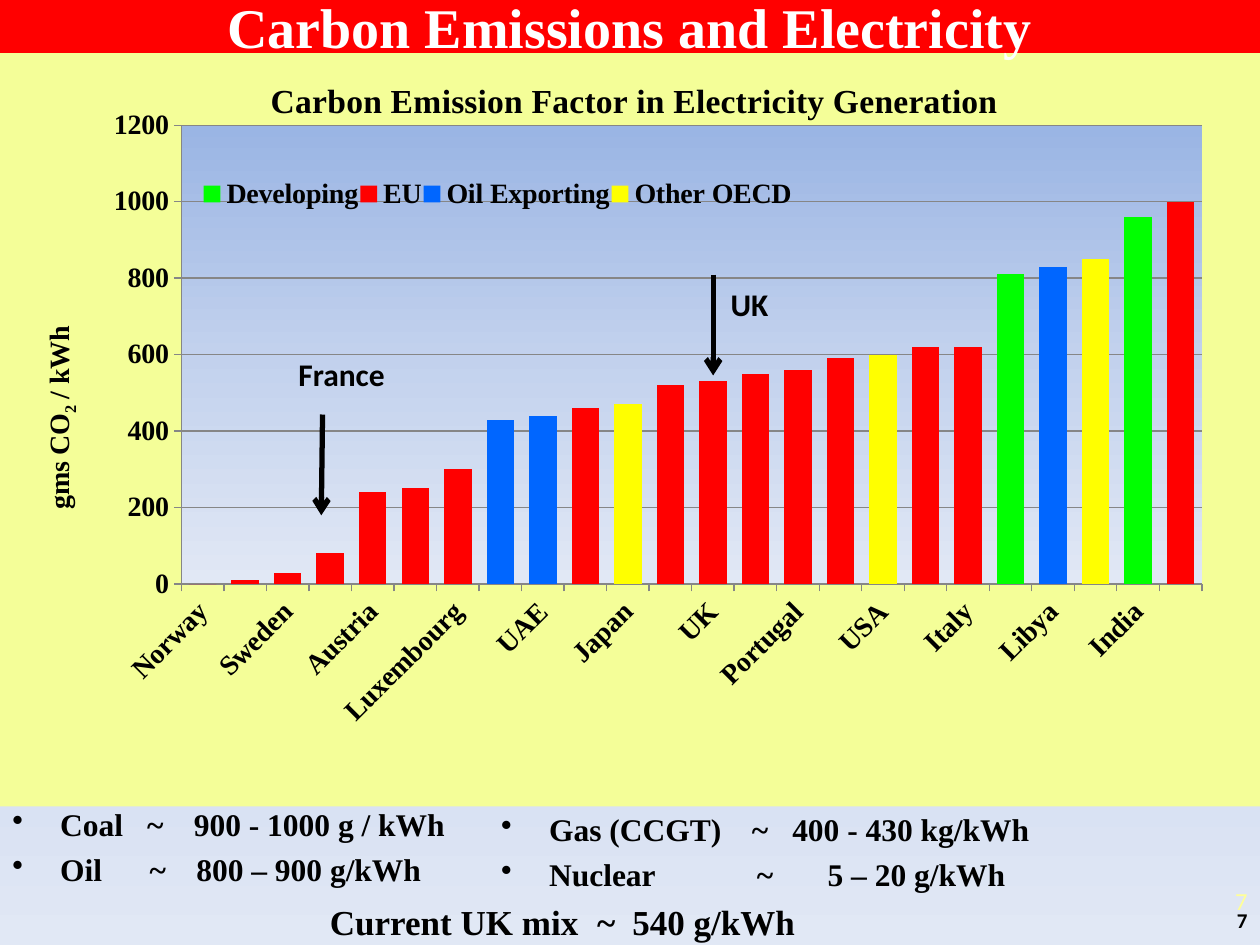
from lxml.etree import SubElement
from pptx import Presentation
from pptx.chart.data import CategoryChartData
from pptx.dml.color import RGBColor
from pptx.enum.chart import XL_CHART_TYPE as ChartType, XL_LEGEND_POSITION as LegendPosition
from pptx.enum.chart import XL_TICK_MARK as TickMark
from pptx.enum.shapes import MSO_CONNECTOR as Connector, MSO_SHAPE as Shape
from pptx.enum.text import MSO_ANCHOR as Anchor, PP_ALIGN as Align
from pptx.oxml import parse_xml
from pptx.oxml.ns import nsdecls, qn
from pptx.util import Inches, Pt

SERIF, SANS = "Times New Roman", "Calibri"
TITLE = "Carbon Emissions and Electricity"
CHART_TITLE = "Carbon Emission Factor in Electricity Generation"
AXIS_TITLE = [("gms CO", False), ("2", True), (" / kWh", False)]
GRADIENT = [(0, "9AB5E4"), (50, "C2D1ED"), (100, "E1E8F5")]
GROUPS = {"Developing": "00FF00", "EU": "FF0000", "Oil Exporting": "0066FF", "Other OECD": "FFFF00"}
DEV, EU, OIL, OECD = GROUPS
# Every other column is labelled
COUNTRIES = ["Norway", "Sweden", "Austria", "Luxembourg", "UAE", "Japan",
             "UK", "Portugal", "USA", "Italy", "Libya", "India"]
EMISSIONS = [
    (EU, 0), (EU, 10), (EU, 30), (EU, 80), (EU, 240), (EU, 250), (EU, 300), (OIL, 430),
    (OIL, 440), (EU, 460), (OECD, 470), (EU, 520), (EU, 530), (EU, 550), (EU, 560), (EU, 590),
    (OECD, 600), (EU, 620), (EU, 620), (DEV, 810), (OIL, 830), (OECD, 850), (DEV, 960), (EU, 1000),
]
# Label, label box, arrow start, arrow end
CALLOUTS = [
    ("UK", (5.7, 2.21, 0.72, 0.4), (5.66, 2.18), (5.66, 2.98)),
    ("France", (2.27, 2.77, 1.1, 0.4), (2.56, 3.29), (2.55, 4.09)),
]
# Box, then lines with their tab stops
FUELS = [
    ((0, 6.34, 3.96, 0.71), [("Coal\t~\t900 - 1000 g / kWh", (1.07, 1.44)),
                             ("Oil\t~\t800 – 900 g/kWh", (1.09, 1.46))]),
    ((3.88, 6.38, 5, 0.81), [("Gas (CCGT)\t~\t400 - 430 kg/kWh", (1.99, 2.31)),
                             ("Nuclear\t~\t5 – 20 g/kWh", (2.03, 2.59))]),
]
UK_MIX = ("Current UK mix\t~\t540 g/kWh", (2.12, 2.4))


def rgb(color):
    return RGBColor.from_string(color)


def inches(values):
    return [Inches(value) for value in values]


def gradient_fill():
    stops = "".join(f'<a:gs pos="{position * 1000}"><a:srgbClr val="{color}"/></a:gs>'
                    for position, color in GRADIENT)
    return parse_xml(f'<a:gradFill {nsdecls("a")}><a:gsLst>{stops}</a:gsLst>'
                     '<a:lin ang="5400000" scaled="0"/></a:gradFill>')


def style_font(font, size, name=SERIF, color="000000", bold=True):
    font.size, font.name, font.bold = Pt(size), name, bold
    font.color.rgb = rgb(color)


def write(frame, lines, size, name=SERIF, color="000000", bold=True, align=None,
          anchor=Anchor.TOP, bullet=False, before=0, wrap=True):
    """Each line is a pair of text and tab stops."""
    frame.word_wrap, frame.vertical_anchor = wrap, anchor
    for index, (text, stops) in enumerate(lines):
        paragraph = frame.paragraphs[0] if index == 0 else frame.add_paragraph()
        paragraph.alignment, paragraph.space_before = align, Pt(before)
        run = paragraph.add_run()
        run.text = text
        style_font(run.font, size, name, color, bold)
        properties = paragraph._p.get_or_add_pPr()
        if bullet:
            properties.set("marL", str(Inches(0.38)))
            properties.set("indent", str(-Inches(0.38)))
            SubElement(properties, qn("a:buChar"), char="•")
        if stops:
            tabs = SubElement(properties, qn("a:tabLst"))
            for stop in stops:
                SubElement(tabs, qn("a:tab"), pos=str(Inches(stop)), algn="l")


def add_text(shapes, box, lines, size, **options):
    write(shapes.add_textbox(*inches(box)).text_frame, lines, size, **options)


def add_arrow(shapes, start, end):
    arrow = shapes.add_connector(Connector.STRAIGHT, *inches(start + end))
    arrow.line.color.rgb, arrow.line.width = rgb("000000"), Pt(3)
    SubElement(arrow.line._get_or_add_ln(), qn("a:tailEnd"), type="arrow")
    SubElement(arrow._element.spPr, qn("a:effectLst"))


def set_layout(parent, inner=False, **fractions):
    """Place a chart part by fractions of the chart's size."""
    for old in parent.findall(qn("c:layout")):
        parent.remove(old)
    target = '<c:layoutTarget val="inner"/>' if inner else ""
    modes = "".join(f'<c:{key}Mode val="edge"/>' for key in "xy")
    values = "".join(f'<c:{key} val="{value}"/>' for key, value in fractions.items())
    layout = parse_xml(f'<c:layout {nsdecls("c")}><c:manualLayout>{target}{modes}{values}'
                       '</c:manualLayout></c:layout>')
    first = parent[0] if len(parent) else None
    after_first = first is not None and first.tag in (qn("c:tx"), qn("c:legendPos"))
    parent.insert(1 if after_first else 0, layout)


def add_emission_chart(slide):
    data = CategoryChartData()
    data.categories = [label for country in COUNTRIES for label in (country, "")]
    for name in GROUPS:
        data.add_series(name, [value if group == name else None for group, value in EMISSIONS])
    chart = slide.shapes.add_chart(ChartType.COLUMN_CLUSTERED, *inches((0, 0.4, 10, 6)), data).chart
    style_font(chart.font, 16)

    # Columns
    plot = chart.plots[0]
    plot.gap_width, plot.overlap, plot.vary_by_categories = 55, 100, False
    for series in plot.series:
        series.format.fill.solid()
        series.format.fill.fore_color.rgb = rgb(GROUPS[series.name])

    # Chart and plot backgrounds
    space = chart._chartSpace
    space.chart.addnext(parse_xml(
        f'<c:spPr {nsdecls("c", "a")}><a:solidFill><a:srgbClr val="F4FE98"/></a:solidFill>'
        '<a:ln><a:noFill/></a:ln></c:spPr>'))
    area = space.chart.plotArea
    set_layout(area, inner=True, x=0.144, y=0.099, w=0.81, h=0.607)
    SubElement(area, qn("c:spPr")).append(gradient_fill())

    # Axes
    value_axis, category_axis = chart.value_axis, chart.category_axis
    value_axis.minimum_scale, value_axis.maximum_scale, value_axis.major_unit = 0, 1200, 200
    value_axis.has_major_gridlines = True
    for axis in (value_axis, category_axis):
        axis.major_tick_mark = TickMark.OUTSIDE
        style_font(axis.tick_labels.font, 16)
        axis.format.line.color.rgb = rgb("868686")
    value_axis.major_gridlines.format.line.color.rgb = rgb("868686")
    category_axis._element.find(qn("c:txPr")).find(qn("a:bodyPr")).set("rot", "-2700000")

    # Titles and legend
    title = chart.chart_title
    write(title.text_frame, [(CHART_TITLE, ())], 19.2)
    title.include_in_layout = False
    set_layout(title._element, x=0.21, y=0.03)
    axis_title = value_axis.axis_title
    paragraph = axis_title.text_frame.paragraphs[0]
    for text, subscript in AXIS_TITLE:
        run = paragraph.add_run()
        run.text = text
        style_font(run.font, 16)
        if subscript:
            run._r.get_or_add_rPr().set("baseline", "-25000")
    axis_title.text_frame._txBody.find(qn("a:bodyPr")).set("rot", "-5400000")
    set_layout(axis_title._element, x=0.03, y=0.36)
    chart.has_legend = True
    chart.legend.position, chart.legend.include_in_layout = LegendPosition.RIGHT, False
    style_font(chart.legend.font, 16)
    set_layout(chart.legend._element, x=0.16, y=0.16, w=0.47, h=0.06)


def main():
    presentation = Presentation()
    presentation.slide_width, presentation.slide_height = Inches(10), Inches(7.5)
    slide = presentation.slides.add_slide(presentation.slide_layouts[6])
    shapes = slide.shapes

    # Background
    slide.background.fill.solid()
    background = slide._element.cSld.find(".//" + qn("p:bgPr"))
    background.replace(background.find(qn("a:solidFill")), gradient_fill())

    add_text(shapes, (7.67, 6.98, 2.33, 0.52), [("7", ())], 14, name=SANS, color="FFFF99",
             bold=False, align=Align.RIGHT)
    add_emission_chart(slide)

    # Title bar
    bar = shapes.add_shape(Shape.RECTANGLE, *inches((0, 0, 10, 0.42)))
    bar.shadow.inherit = False
    bar.fill.solid()
    bar.fill.fore_color.rgb = rgb("FF0000")
    bar.line.fill.background()
    write(bar.text_frame, [(TITLE, ())], 32, color="FFFFFF", align=Align.CENTER, anchor=Anchor.MIDDLE)

    # Country callouts
    for label, box, start, end in CALLOUTS:
        group = shapes.add_group_shape()
        add_text(group.shapes, box, [(label, ())], 18, name=SANS)
        add_arrow(group.shapes, start, end)

    # Fuel figures and page number
    for box, lines in FUELS:
        add_text(shapes, box, lines, 18, bullet=True, before=4)
    add_text(shapes, (2.52, 7.1, 4.08, 0.44), [UK_MIX], 20, before=4, wrap=False)
    add_text(shapes, (7.67, 7.1, 2.33, 0.4), [("7", ())], 12, name=SANS, align=Align.RIGHT,
             anchor=Anchor.MIDDLE)
    presentation.save("out.pptx")


if __name__ == "__main__":
    main()
